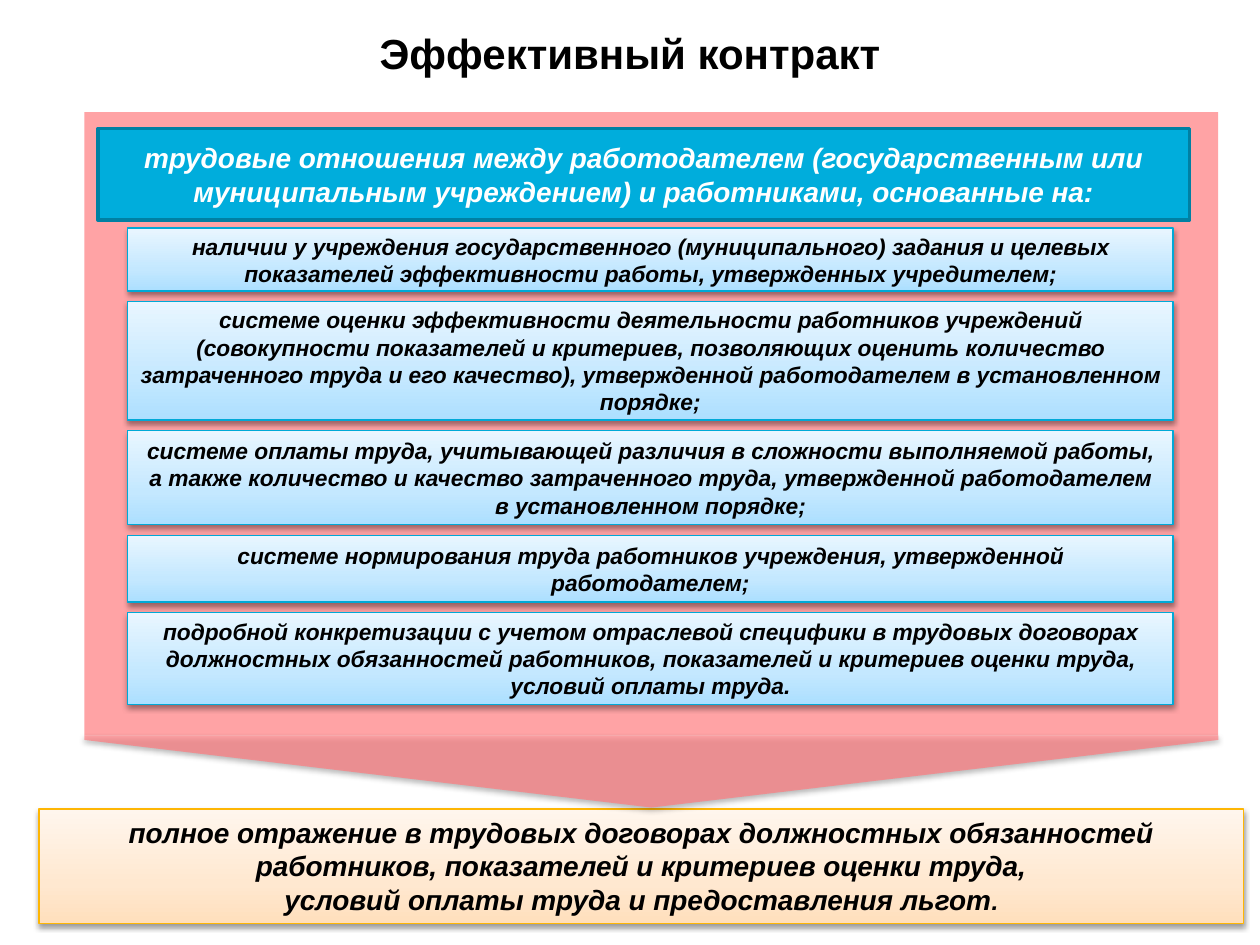
from copy import deepcopy

from lxml import etree
from pptx import Presentation
from pptx.dml.color import RGBColor
from pptx.enum import shapes, text
from pptx.oxml import ns
from pptx.util import Cm, Pt

FONT = "Arial"
PINK = "FF7C80"
BLUES = [(0, "ACDFFF"), (0.35, "C4E8FF"), (1, "E9F6FF")]
CREAMS = [(0, "FFDFBC"), (0.35, "FFE8D0"), (1, "FFF6ED")]

HEADER = ("трудовые отношения между работодателем (государственным или "
          "муниципальным учреждением) и работниками, основанные на:")
# Box height in cm, wording
BASES = [
    (1.27, "наличии у учреждения государственного (муниципального) задания и "
           "целевых показателей эффективности работы, утвержденных учредителем;"),
    (2.39, "системе оценки эффективности деятельности работников учреждений "
           "(совокупности показателей и критериев, позволяющих оценить "
           "количество затраченного труда и его качество), утвержденной "
           "работодателем в установленном порядке;"),
    (1.9, "системе оплаты труда, учитывающей различия в сложности выполняемой "
          "работы, а также количество и качество затраченного труда, "
          "утвержденной работодателем в установленном порядке;"),
    (1.35, "системе нормирования труда работников учреждения, утвержденной "
           "работодателем;"),
    (1.85, "подробной конкретизации с учетом отраслевой специфики в трудовых "
           "договорах должностных обязанностей работников, показателей и "
           "критериев оценки труда, условий оплаты труда."),
]
RESULT = [
    "полное отражение в трудовых договорах должностных обязанностей "
    "работников, показателей и критериев оценки труда,",
    "условий оплаты труда и предоставления льгот",
]


def rgb(color):
    return RGBColor.from_string(color)


def add_alpha(clr, percent):
    etree.SubElement(clr, ns.qn("a:alpha"), val=str(percent * 1000))


def add_shape(s, box, kind=shapes.MSO_SHAPE.RECTANGLE, line=None, width=0.75):
    sp = s.shapes.add_shape(kind, *(Cm(v) for v in box))
    sp.shadow.inherit = False
    if line:
        sp.line.color.rgb = rgb(line)
        sp.line.width = Pt(width)
    else:
        sp.line.fill.background()
    return sp


def fill_solid(sp, color, alpha=None):
    sp.fill.solid()
    sp.fill.fore_color.rgb = rgb(color)
    if alpha:
        add_alpha(sp._element.spPr.find(".//" + ns.qn("a:srgbClr")), alpha)


def fill_gradient(sp, stops):
    """Fill upwards from the first stop to the last."""
    sp.fill.gradient()
    sp.fill.gradient_angle = 90
    gs_list = sp._element.spPr.find(".//" + ns.qn("a:gsLst"))
    while len(gs_list) < len(stops):
        gs_list.append(deepcopy(gs_list[0]))
    for stop, (position, color) in zip(sp.fill.gradient_stops, stops):
        stop.position = position
        stop.color.rgb = rgb(color)


def add_shadow(sp):
    effects = sp._element.spPr.find(ns.qn("a:effectLst"))
    shadow = etree.SubElement(effects, ns.qn("a:outerShdw"), blurRad="40000",
                              dist="20000", dir="5400000", rotWithShape="0")
    add_alpha(etree.SubElement(shadow, ns.qn("a:srgbClr"), val="000000"), 38)


def write(sp, lines, size, color="000000", italic=True,
          anchor=text.MSO_ANCHOR.MIDDLE):
    tf = sp.text_frame
    tf.word_wrap = True
    tf.vertical_anchor = anchor
    tf.text = "\n".join(lines)
    for p in tf.paragraphs:
        p.alignment = text.PP_ALIGN.CENTER
        p.font.name = FONT
        p.font.size = Pt(size)
        p.font.bold = True
        p.font.italic = italic
        p.font.color.rgb = rgb(color)


def add_title(s, box):
    title = s.shapes.title
    title.left, title.top, title.width, title.height = (Cm(v) for v in box)
    write(title, ["Эффективный контракт"], 24, italic=False,
          anchor=text.MSO_ANCHOR.TOP)


def add_panel(s, box):
    """Pink panel with its header and the stack of bases."""
    x, y, w, h = box
    fill_solid(add_shape(s, box), PINK, 70)

    header = add_shape(s, (x + 0.28, y + 0.33, 22, 1.85), line="0080A3", width=2)
    fill_solid(header, "00ADDC")
    write(header, [HEADER], 16, "FFFFFF")

    gap = 0.21
    top = y + 2.34
    for height, wording in BASES:
        sp = add_shape(s, (x + 0.87, top, w - 1.78, height), line="00A9D7")
        fill_gradient(sp, BLUES)
        add_shadow(sp)
        write(sp, [wording], 13)
        top += height + gap


def add_result(s, box):
    sp = add_shape(s, box, line="FEB604")
    fill_gradient(sp, CREAMS)
    add_shadow(sp)
    write(sp, RESULT, 16, anchor=text.MSO_ANCHOR.TOP)
    r = sp.text_frame.paragraphs[-1].add_run()
    r.text = "."
    r.font.size = Pt(14)


def add_down_arrow(s, box):
    """Pentagon turned to point down, filling the box."""
    x, y, w, h = box
    turned = (x + (w - h) / 2, y + (h - w) / 2, h, w)
    sp = add_shape(s, turned, shapes.MSO_SHAPE.PENTAGON)
    sp.rotation = 90
    sp.adjustments[0] = 0.94
    fill_solid(sp, PINK, 70)
    add_shadow(sp)


def main():
    prs = Presentation()
    prs.slide_width, prs.slide_height = Cm(25.4), Cm(19.05)
    s = prs.slides.add_slide(prs.slide_layouts[5])
    add_title(s, (7.2, 0.43, 11, 1.3))
    add_panel(s, (1.7, 2.26, 22.86, 12.57))
    add_result(s, (0.79, 16.31, 24.28, 2.31))
    add_down_arrow(s, (1.7, 14.83, 22.86, 1.45))
    prs.save("out.pptx")


if __name__ == "__main__":
    main()
